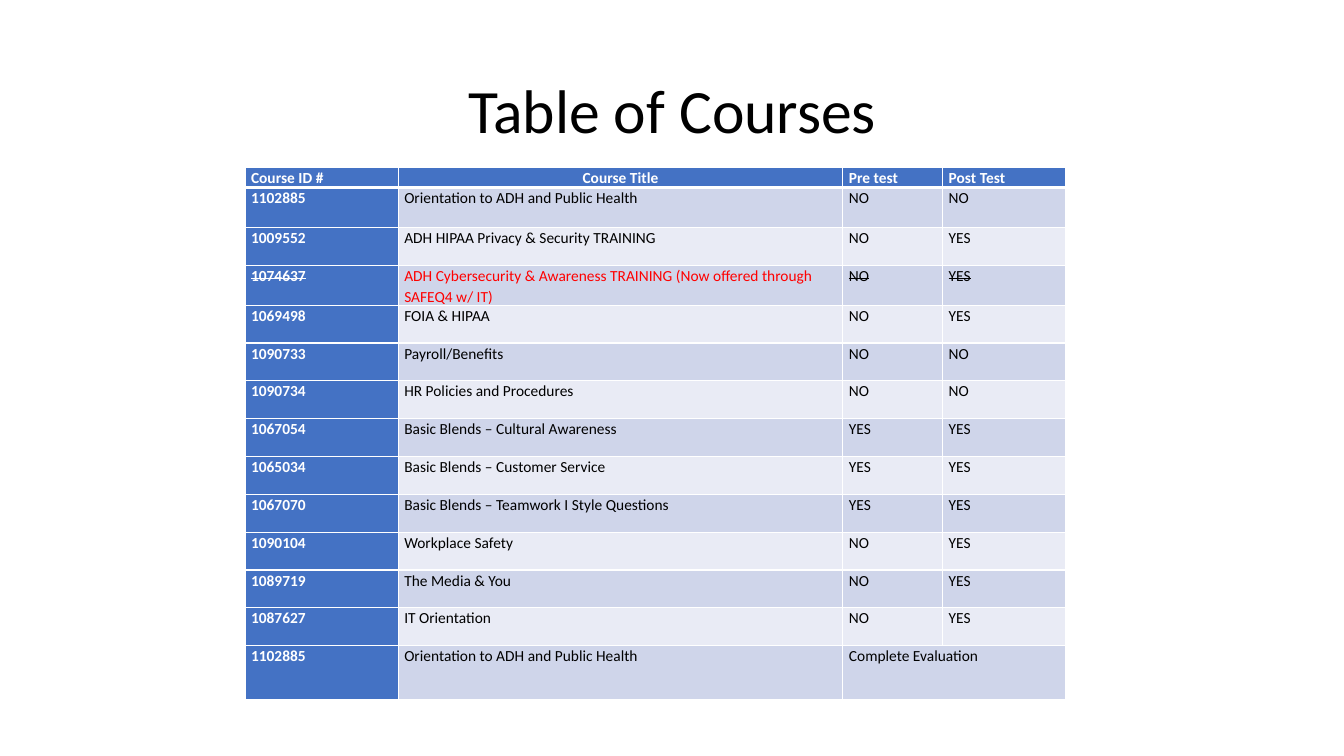
from lxml import etree
from pptx import Presentation
from pptx import util as u
from pptx.dml.color import RGBColor
from pptx.enum import text
from pptx.oxml import ns

HEADING = "Table of Courses"
HEADERS = ("Course ID #", "Course Title", "Pre test", "Post Test")
COURSES = [
    ("1102885", "Orientation to ADH and Public Health", "NO", "NO"),
    ("1009552", "ADH HIPAA Privacy & Security TRAINING", "NO", "YES"),
    ("1074637", "ADH Cybersecurity & Awareness TRAINING (Now offered through "
                "SAFEQ4 w/ IT)", "NO", "YES"),
    ("1069498", "FOIA & HIPAA", "NO", "YES"),
    ("1090733", "Payroll/Benefits", "NO", "NO"),
    ("1090734", "HR Policies and Procedures", "NO", "NO"),
    ("1067054", "Basic Blends – Cultural Awareness", "YES", "YES"),
    ("1065034", "Basic Blends – Customer Service", "YES", "YES"),
    ("1067070", "Basic Blends – Teamwork I Style Questions", "YES", "YES"),
    ("1090104", "Workplace Safety", "NO", "YES"),
    ("1089719", "The Media & You", "NO", "YES"),
    ("1087627", "IT Orientation", "NO", "YES"),
    ("1102885", "Orientation to ADH and Public Health", "Complete Evaluation", ""),
]
WITHDRAWN = "1074637"
FONT = "Calibri"
WHITE, BLACK, RED, BLUE = "FFFFFF", "000000", "FF0000", "4472C4"
BANDS = ("E9EBF5", "CFD5EA")
WIDTH, HEIGHT = 13.33, 7.5
LEFT, TOP = 2.43, 1.66
COLUMNS = (1.52, 4.41, 0.99, 1.22)
COURSE_ROW = 4.13 / 11
ROWS = [0.2, 0.4] + [COURSE_ROW] * 11 + [0.54]


def colour(value):
    """Turn a hex string into a colour."""
    return RGBColor.from_string(value)


def write(frame, words, size, ink, bold=False, align=None, spacing=1.0):
    """Write one formatted paragraph into a text frame."""
    frame.text = words
    line = frame.paragraphs[0]
    line.alignment, line.line_spacing = align, spacing
    for run in line.runs:
        run.font.name, run.font.size, run.font.bold = FONT, u.Pt(size), bold
        run.font.color.rgb = colour(ink)


def outline(cell, bottom):
    """Draw the white borders of a cell."""
    properties = cell._tc.get_or_add_tcPr()
    for place, (side, points) in enumerate(zip("LRTB", (1, 1, 1, bottom))):
        edge = etree.Element(ns.qn(f"a:ln{side}"), w=str(u.Pt(points)))
        fill = etree.SubElement(edge, ns.qn("a:solidFill"))
        etree.SubElement(fill, ns.qn("a:srgbClr"), val=WHITE)
        properties.insert(place, edge)


def fill_cell(cell, row, column, words, withdrawn):
    """Style and write one cell of the course table."""
    header, key = row == 0, row == 0 or column == 0
    cell.margin_left = cell.margin_right = u.Inches(0.06)
    cell.margin_top = cell.margin_bottom = 0
    cell.fill.solid()
    cell.fill.fore_color.rgb = colour(BLUE if key else BANDS[row % 2])
    outline(cell, 3 if header else 1)
    ink = WHITE if key else RED if withdrawn and column == 1 else BLACK
    align = text.PP_ALIGN.CENTER if header and column == 1 else text.PP_ALIGN.LEFT
    write(cell.text_frame, words, 11, ink, key, align, 1.07)
    if withdrawn and column != 1:
        for run in cell.text_frame.paragraphs[0].runs:
            run.font._element.set("strike", "sngStrike")


def main():
    """Build the slide."""
    deck = Presentation()
    deck.slide_width, deck.slide_height = u.Inches(WIDTH), u.Inches(HEIGHT)
    slide = deck.slides.add_slide(deck.slide_layouts[6])

    heading = slide.shapes.add_textbox(
        *map(u.Inches, (0.92, 0.4, 11.5, 1.45))).text_frame
    heading.word_wrap = True
    heading.vertical_anchor = text.MSO_ANCHOR.MIDDLE
    write(heading, HEADING, 44, BLACK, align=text.PP_ALIGN.CENTER, spacing=0.9)

    courses = slide.shapes.add_table(
        len(ROWS), len(COLUMNS),
        *map(u.Inches, (LEFT, TOP, sum(COLUMNS), sum(ROWS)))).table
    courses.first_row = courses.horz_banding = False
    for column, width in zip(courses.columns, COLUMNS):
        column.width = u.Inches(width)
    for row, height in zip(courses.rows, ROWS):
        row.height = u.Inches(height)
    for row, course in enumerate([HEADERS] + COURSES):
        for column, words in enumerate(course):
            fill_cell(courses.cell(row, column), row, column, words,
                      course[0] == WITHDRAWN)
    last = len(ROWS) - 1
    courses.cell(last, 2).merge(courses.cell(last, 3))

    deck.save("out.pptx")


if __name__ == "__main__":
    main()
